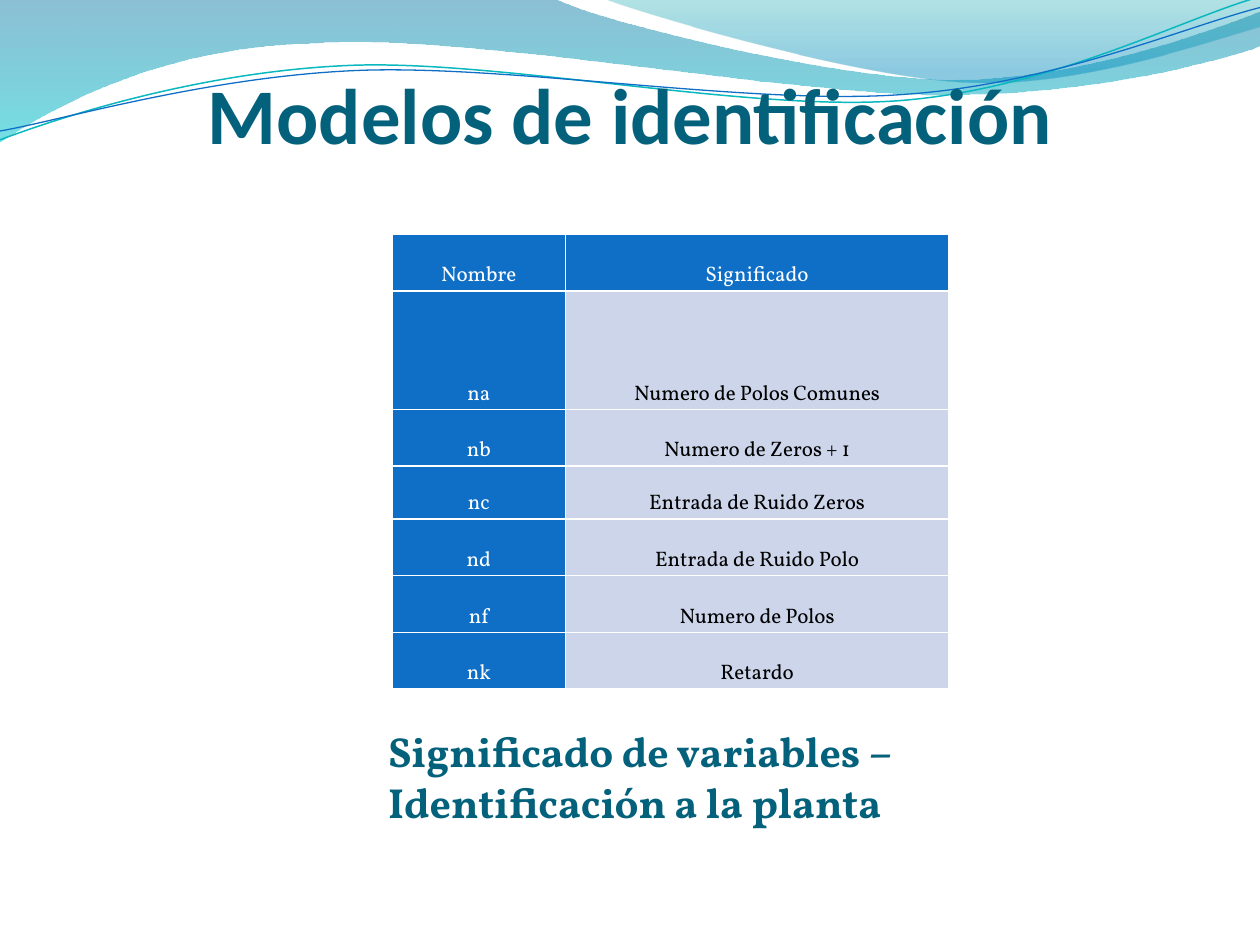
from lxml.etree import SubElement
from pptx import Presentation
from pptx.dml.color import RGBColor
from pptx.enum.text import MSO_ANCHOR, PP_ALIGN
from pptx.oxml.ns import qn
from pptx.util import Inches, Pt

COLUMNS, ROWS = 10, 7.5
COLORS = {
    "heading": "04617B",
    "accent": "0F6FC6",
    "band": "CCD5EA",
    "white": "FFFFFF",
    "black": "000000",
    "teal": "0AB8BF",
    "deep": "0074A1",
    "aqua": "00C6CF",
    "sea": "00A1A9",
    "sky": "008BBF",
}
MEANINGS = [
    ("Nombre", "Significado"),
    ("na", "Numero de Polos Comunes"),
    ("nb", "Numero de Zeros + 1"),
    ("nc", "Entrada de Ruido Zeros"),
    ("nd", "Entrada de Ruido Polo"),
    ("nf", "Numero de Polos"),
    ("nk", "Retardo"),
]
COLUMN_WIDTHS = [1.38, 3.04]
ROW_HEIGHTS = [0.45, 0.94, 0.45, 0.42, 0.45, 0.45, 0.45]
LEFT_WAVE = [
    [(0, 0)],
    [(4.4, -0.01)],
    [(4.76, 0.17), (6.64, 0.63), (7.58, 0.63)],
    [(8.53, 0.63), (9.58, 0.26), (10, 0.09)],
    [(10.01, 0.36)],
    [(9.83, 0.44), (8.7, 0.76), (7.46, 0.75)],
    [(6.22, 0.75), (3.82, 0.28), (2.57, 0.34)],
    [(1.29, 0.36), (0.46, 0.83), (-0.01, 1.13)],
]
RIGHT_WAVE = [
    [(4.79, -0.01)],
    [(5.09, 0.11), (6.82, 0.62), (7.69, 0.65)],
    [(8.56, 0.69), (9.61, 0.32), (10, 0.21)],
    [(10, 0)],
]
TEAL_CURVE = [
    [(0, 1.11)],
    [(0.48, 0.93), (1.58, 0.57), (2.77, 0.52)],
    [(3.95, 0.47), (5.93, 0.89), (7.13, 0.8)],
    [(8.33, 0.71), (9.38, 0.15), (9.98, -0.02)],
]
BLUE_CURVE = [
    [(0, 1.04)],
    [(0.47, 0.96), (1.64, 0.61), (2.83, 0.56)],
    [(4.03, 0.51), (5.97, 0.84), (7.17, 0.75)],
    [(8.36, 0.67), (9.41, 0.21), (10, 0.06)],
]


def color(name):
    return RGBColor.from_string(COLORS[name])


def bend_segments(shape, segments):
    steps = iter(list(shape._element.iter(qn("a:lnTo"))))
    for segment in segments[1:]:
        bend = next(steps)
        if len(segment) == 3:
            bend.tag = qn("a:cubicBezTo")
            for _ in segment[1:]:
                step = next(steps)
                bend.append(step[0])
                step.getparent().remove(step)


def add_outline(page, segments, close):
    points = [(Inches(x), Inches(y)) for segment in segments for x, y in segment]
    builder = page.shapes.build_freeform(*points[0])
    builder.add_line_segments(points[1:], close=close)
    shape = builder.convert_to_shape()
    shape.shadow.inherit = False
    bend_segments(shape, segments)
    return shape


def add_wave(page, segments, stops):
    wave = add_outline(page, segments, True)
    wave.line.fill.background()
    wave.fill.gradient()
    wave.fill.gradient_angle = 270
    for stop, (position, shade, _) in zip(wave.fill.gradient_stops, stops):
        stop.position = position
        stop.color.rgb = color(shade)
    stop_colors = wave._element.spPr.findall(".//" + qn("a:srgbClr"))
    for stop_color, (_, _, opacity) in zip(stop_colors, stops):
        SubElement(stop_color, qn("a:alpha"), val=str(opacity * 1000))


def add_curve(page, segments, shade, width):
    curve = add_outline(page, segments, False)
    curve.fill.background()
    curve.line.color.rgb = color(shade)
    curve.line.width = Pt(width)


def style_font(font, name, size, shade, bold=False):
    font.name = name
    font.size = Pt(size)
    font.bold = bold
    font.color.rgb = color(shade)


def add_text(page, text, area, insets, anchor, align, font_name, size):
    box = page.shapes.add_textbox(*map(Inches, area))
    frame = box.text_frame
    frame.word_wrap = True
    frame.vertical_anchor = anchor
    frame.margin_left, frame.margin_top, frame.margin_right, frame.margin_bottom = map(Inches, insets)
    para = frame.paragraphs[0]
    para.text = text
    para.alignment = align
    style_font(para.font, font_name, size, "heading", True)


def add_borders(cell):
    properties = cell._tc.get_or_add_tcPr()
    for index, side in enumerate(("a:lnL", "a:lnR", "a:lnT", "a:lnB")):
        line = SubElement(properties, qn(side), w=str(Pt(1)))
        fill = SubElement(line, qn("a:solidFill"))
        SubElement(fill, qn("a:srgbClr"), val=COLORS["white"])
        properties.insert(index, line)


def fill_cell(cell, text, background, shade):
    cell.fill.solid()
    cell.fill.fore_color.rgb = color(background)
    cell.vertical_anchor = MSO_ANCHOR.BOTTOM
    cell.margin_left = cell.margin_right = Inches(0.08)
    cell.margin_top = cell.margin_bottom = 0
    para = cell.text_frame.paragraphs[0]
    para.text = text
    para.alignment = PP_ALIGN.CENTER
    para.line_spacing = 1.5
    para.space_after = Pt(10)
    style_font(para.font, "Vollkorn", 12, shade)
    add_borders(cell)


def add_meanings_table(page, left, top):
    area = (left, top, sum(COLUMN_WIDTHS), sum(ROW_HEIGHTS))
    table = page.shapes.add_table(len(ROW_HEIGHTS), len(COLUMN_WIDTHS), *map(Inches, area)).table
    for column, width in zip(table.columns, COLUMN_WIDTHS):
        column.width = Inches(width)
    for row, height in zip(table.rows, ROW_HEIGHTS):
        row.height = Inches(height)
    for row_index, texts in enumerate(MEANINGS):
        for column_index, text in enumerate(texts):
            is_header = row_index == 0 or column_index == 0
            background, shade = ("accent", "white") if is_header else ("band", "black")
            fill_cell(table.cell(row_index, column_index), text, background, shade)


def main():
    deck = Presentation()
    deck.slide_width, deck.slide_height = Inches(COLUMNS), Inches(ROWS)
    page = deck.slides.add_slide(deck.slide_layouts[6])
    add_wave(page, LEFT_WAVE, [(0, "deep", 45), (1, "aqua", 55)])
    add_wave(page, RIGHT_WAVE, [(0, "sea", 30), (0.8, "sky", 45)])
    add_curve(page, TEAL_CURVE, "teal", 0.85)
    add_curve(page, BLUE_CURVE, "accent", 0.75)
    add_text(page, "Modelos de identificación", (0.5, 0.77, 9, 1.25), (0, 0.05, 0, 0.75),
             MSO_ANCHOR.BOTTOM, PP_ALIGN.CENTER, "Calibri", 45)
    add_text(page, "Significado de variables – Identificación a la planta", (3.03, 5.8, 4.42, 0.72),
             (0.05, 0, 0.05, 0), MSO_ANCHOR.MIDDLE, PP_ALIGN.LEFT, "Vollkorn", 24)
    add_meanings_table(page, 3.11, 1.86)
    deck.save("out.pptx")


if __name__ == "__main__":
    main()
